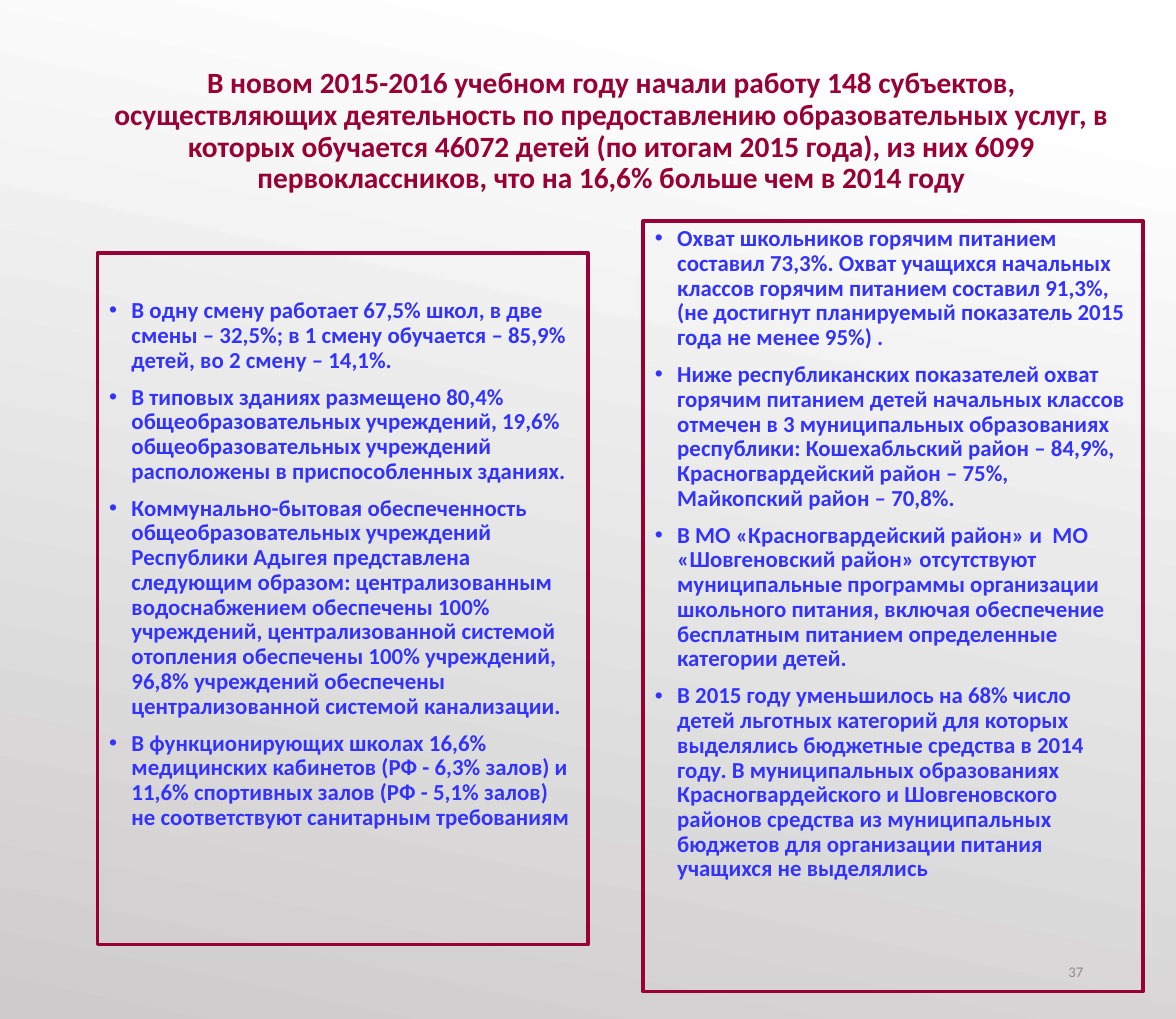
"""Build a slide on the 2015-2016 school year with two bordered bullet panels."""
from dataclasses import dataclass

from lxml.etree import SubElement
from pptx import Presentation
from pptx.dml.color import RGBColor
from pptx.enum.shapes import MSO_SHAPE as Shape
from pptx.enum.text import MSO_ANCHOR as Anchor, PP_ALIGN as Align
from pptx.oxml.ns import qn
from pptx.util import Inches, Pt

CRIMSON, BLUE, GREY = "990033", "3333FF", "8C8C8C"
BULLET_INDENT = Inches(0.19)


@dataclass(frozen=True)
class Area:
    left: float
    top: float
    width: float
    height: float

    def lengths(self):
        return [Inches(n) for n in (self.left, self.top, self.width, self.height)]


@dataclass(frozen=True)
class Panel:
    area: Area
    top_inset: float
    items: tuple[str, ...]


TITLE = (
    "В новом 2015-2016 учебном году начали работу 148 субъектов, осуществляющих "
    "деятельность по предоставлению образовательных услуг, в которых обучается "
    "46072 детей (по итогам 2015 года), из них 6099 первоклассников, что на 16,6% "
    "больше чем в 2014 году"
)

PANELS = (
    Panel(Area(0.83, 2.15, 4.17, 5.88), 0.39, (
        "В одну смену работает 67,5% школ, в две смены – 32,5%; в 1 смену обучается "
        "– 85,9% детей, во 2 смену – 14,1%.",
        "В типовых зданиях размещено 80,4% общеобразовательных учреждений, 19,6% "
        "общеобразовательных учреждений расположены в приспособленных зданиях.",
        "Коммунально-бытовая обеспеченность общеобразовательных учреждений Республики "
        "Адыгея представлена следующим образом: централизованным водоснабжением "
        "обеспечены 100% учреждений, централизованной системой отопления обеспечены "
        "100% учреждений, 96,8% учреждений обеспечены централизованной системой "
        "канализации.",
        "В функционирующих школах 16,6% медицинских кабинетов (РФ - 6,3% залов) и "
        "11,6% спортивных залов (РФ - 5,1% залов) не соответствуют санитарным "
        "требованиям",
    )),
    Panel(Area(5.47, 1.88, 4.25, 6.55), 0.05, (
        "Охват школьников горячим питанием составил 73,3%. Охват учащихся начальных "
        "классов горячим питанием составил 91,3%, (не достигнут планируемый "
        "показатель 2015 года не менее 95%) .",
        "Ниже республиканских показателей охват горячим питанием детей начальных "
        "классов отмечен в 3 муниципальных образованиях республики: Кошехабльский "
        "район – 84,9%, Красногвардейский район – 75%, Майкопский район – 70,8%.",
        "В МО «Красногвардейский район» и  МО «Шовгеновский район» отсутствуют "
        "муниципальные программы организации школьного питания, включая обеспечение "
        "бесплатным питанием определенные категории детей.",
        "В 2015 году уменьшилось на 68% число детей льготных категорий для которых "
        "выделялись бюджетные средства в 2014 году. В муниципальных образованиях "
        "Красногвардейского и Шовгеновского районов средства из муниципальных "
        "бюджетов для организации питания учащихся не выделялись",
    )),
)


def color(value: str) -> RGBColor:
    return RGBColor.from_string(value)


def write(para, text: str, *, size: float, ink: str, bold: bool = False,
          align=Align.LEFT, spacing: float = 1.0, before: float = 0,
          bullet: bool = False) -> None:
    para.alignment, para.line_spacing, para.space_before = align, spacing, Pt(before)
    span = para.add_run()
    span.text = text
    font = span.font
    font.name, font.size, font.bold = "Calibri", Pt(size), bold
    font.color.rgb = color(ink)
    if bullet:
        props = para._p.get_or_add_pPr()
        props.set("marL", str(BULLET_INDENT))
        props.set("indent", str(-BULLET_INDENT))
        SubElement(props, qn("a:buFont"), typeface="Arial")
        SubElement(props, qn("a:buChar"), char="•")


def add_label(page, area: Area, text: str, **style) -> None:
    frame = page.shapes.add_textbox(*area.lengths()).text_frame
    frame.word_wrap, frame.vertical_anchor = True, Anchor.MIDDLE
    write(frame.paragraphs[0], text, **style)


def add_panel(page, panel: Panel) -> None:
    box = page.shapes.add_shape(Shape.RECTANGLE, *panel.area.lengths())
    box.shadow.inherit = False
    box.fill.background()
    box.line.color.rgb, box.line.width = color(CRIMSON), Pt(2.25)
    frame = box.text_frame
    frame.word_wrap, frame.vertical_anchor = True, Anchor.TOP
    frame.margin_top = Inches(panel.top_inset)
    for index, item in enumerate(panel.items):
        para = frame.add_paragraph() if index else frame.paragraphs[0]
        write(para, item, size=14, ink=BLUE, bold=True, spacing=0.9,
              before=7.5, bullet=True)


def paint_background(page) -> None:
    fill = page.background.fill
    fill.gradient()
    fill.gradient_angle = 360 - 102
    for stop, (position, tint) in zip(fill.gradient_stops, ((0.1, "FFFFFF"), (1, "CDCBCB"))):
        stop.position, stop.color.rgb = position, color(tint)


def main() -> None:
    deck = Presentation()
    deck.slide_width, deck.slide_height = Inches(10), Pt(623.75)
    page = deck.slides.add_slide(deck.slide_layouts[6])
    paint_background(page)
    add_label(page, Area(0.83, 0.46, 8.74, 1.32), TITLE, size=18, ink=CRIMSON,
              bold=True, align=Align.CENTER, spacing=0.9)
    for panel in PANELS:
        add_panel(page, panel)
    add_label(page, Area(7.06, 8.03, 2.25, 0.46), "37", size=9, ink=GREY,
              align=Align.RIGHT)
    deck.save("out.pptx")


if __name__ == "__main__":
    main()
